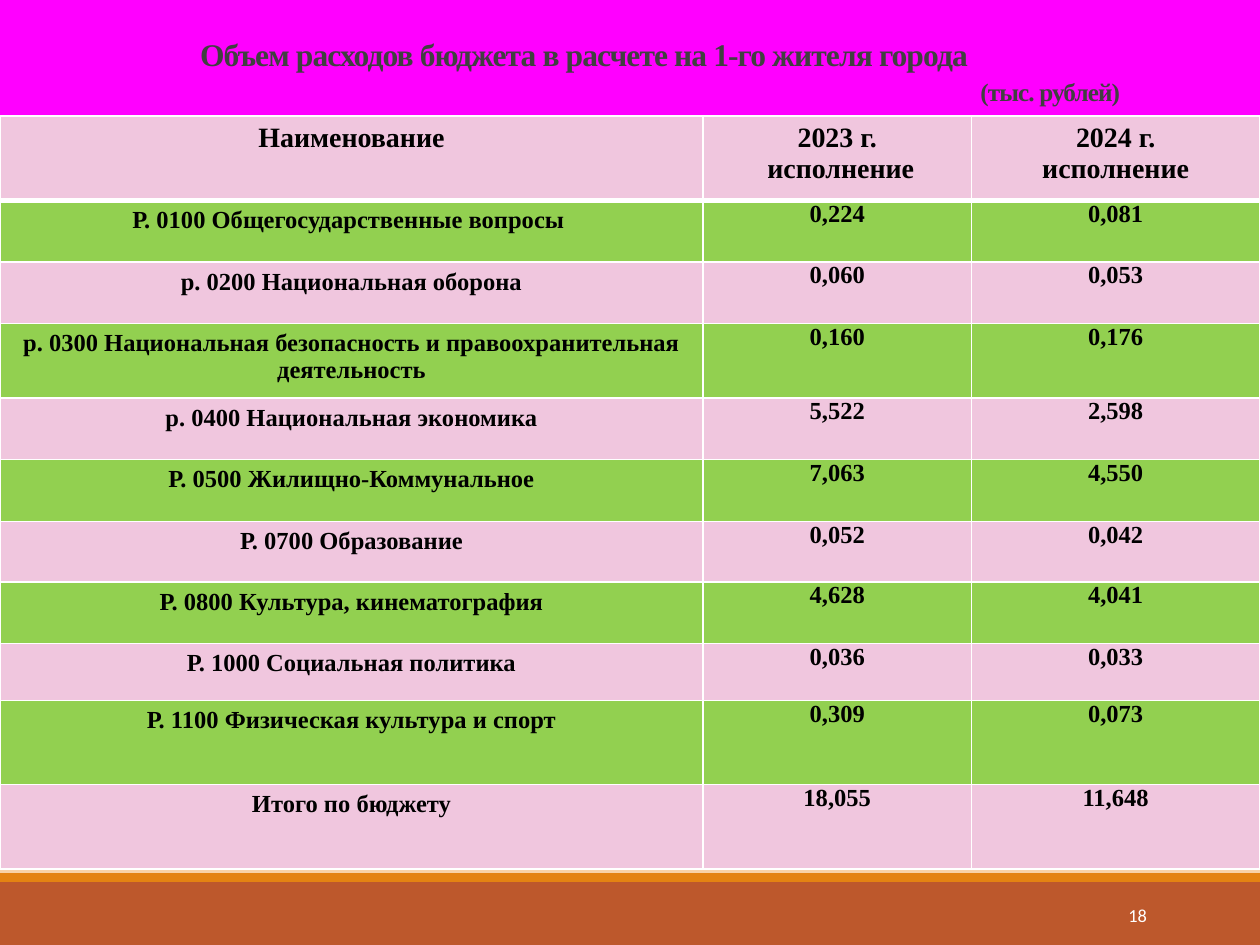
from lxml import etree
from pptx import Presentation
from pptx.dml.color import RGBColor
from pptx.enum.shapes import MSO_SHAPE
from pptx.enum.text import MSO_ANCHOR, PP_ALIGN
from pptx.oxml.ns import qn
from pptx.util import Inches, Pt

CENTER, RIGHT = PP_ALIGN.CENTER, PP_ALIGN.RIGHT
BOTTOM, MIDDLE, TOP = MSO_ANCHOR.BOTTOM, MSO_ANCHOR.MIDDLE, MSO_ANCHOR.TOP
RECTANGLE = MSO_SHAPE.RECTANGLE
SERIF, SANS = "Times New Roman", "Calibri"
PINK, GREEN, WHITE, GREY = "F0C6DE", "92D050", "FFFFFF", "404040"
GRID_COLUMNS, GRID_ROWS = 100, 75
CELL = Inches(0.1)

COLUMN_SPANS = [55.8, 21.3, 22.9]
ROW_SPANS = [6.7, 4.9, 4.9, 5.9, 4.9, 4.9, 4.8, 4.9, 4.5, 6.7, 6.7]
EXPENSES = [
    ("Наименование", "2023 г.\n исполнение", "2024 г.\nисполнение"),
    ("Р. 0100 Общегосударственные вопросы ", "0,224", "0,081"),
    ("р. 0200 Национальная оборона", "0,060", "0,053"),
    ("р. 0300 Национальная безопасность и правоохранительная деятельность", "0,160", "0,176"),
    ("р. 0400 Национальная экономика", "5,522", "2,598"),
    ("Р. 0500 Жилищно-Коммунальное", "7,063", "4,550"),
    ("Р. 0700 Образование", "0,052", "0,042"),
    ("Р. 0800 Культура, кинематография", "4,628", "4,041"),
    ("Р. 1000 Социальная политика", "0,036", "0,033"),
    ("Р. 1100 Физическая культура и спорт", "0,309", "0,073"),
    ("Итого по бюджету", "18,055", "11,648"),
]


def color(value):
    return RGBColor.from_string(value)


def span(count):
    return int(count * CELL)


def place(box):
    return [span(count) for count in box]


def write(paragraph, text, size, font=SERIF, fill="000000", bold=True,
          align=CENTER, line=None, before=None, tracking=None):
    paragraph.alignment = align
    if line:
        paragraph.line_spacing = line
    if before:
        paragraph.space_before = Pt(before)
    run = paragraph.add_run()
    run.text = text
    run.font.size, run.font.name, run.font.bold = Pt(size), font, bold
    run.font.color.rgb = color(fill)
    if tracking:
        run.font._element.set("spc", str(int(tracking * 100)))


def text_frame(slide, box, anchor):
    frame = slide.shapes.add_textbox(*place(box)).text_frame
    frame.word_wrap = True
    frame.vertical_anchor = anchor
    return frame


def border(cell, side, width):
    edge = etree.SubElement(cell._tc.get_or_add_tcPr(), qn(f"a:{side}"), w=str(Pt(width)))
    fill = etree.SubElement(edge, qn("a:solidFill"))
    etree.SubElement(fill, qn("a:srgbClr"), val=WHITE)


def add_background(slide):
    fill = slide.background.fill
    fill.gradient()
    gradient = slide.background._cSld.find(".//" + qn("a:gradFill"))
    stops = gradient.find(qn("a:gsLst"))
    for stop in list(stops):
        stops.remove(stop)
    for position, tone in ((55, "FF00FF"), (74, "F6C791"), (83, "F6C791"), (100, "F9DAB6")):
        stop = etree.SubElement(stops, qn("a:gs"), pos=str(position * 1000))
        etree.SubElement(stop, qn("a:srgbClr"), val=tone)
    gradient.find(qn("a:lin")).set("ang", "5400000")


def add_heading(slide, box):
    frame = text_frame(slide, box, BOTTOM)
    frame.margin_left, frame.margin_right = Inches(0.21), Inches(0.28)
    frame.margin_bottom = Inches(0.07)
    shared = dict(fill=GREY, line=0.85, tracking=-0.5)
    write(frame.paragraphs[0], "Объем расходов бюджета в расчете на 1-го жителя города", 18, **shared)
    write(frame.add_paragraph(), "(тыс. рублей)", 14.4, align=RIGHT, before=5, **shared)


def fill_cell(cell, text, is_header, is_value, fill):
    if is_value and not is_header:
        cell.margin_left = cell.margin_right = cell.margin_top = cell.margin_bottom = 0
    cell.vertical_anchor = TOP
    frame = cell.text_frame
    for index, line in enumerate(text.split("\n")):
        paragraph = frame.add_paragraph() if index else frame.paragraphs[0]
        write(paragraph, line, 16 if is_header else 14)
    for side in ("lnL", "lnR", "lnT", "lnB"):
        border(cell, side, 3 if is_header and side == "lnB" else 1)
    cell.fill.solid()
    cell.fill.fore_color.rgb = color(fill)


def add_expenses(slide, box):
    table = slide.shapes.add_table(len(EXPENSES), len(COLUMN_SPANS), *place(box)).table
    for column, count in zip(table.columns, COLUMN_SPANS):
        column.width = span(count)
    for row, count in zip(table.rows, ROW_SPANS):
        row.height = span(count)
    for r, record in enumerate(EXPENSES):
        for c, text in enumerate(record):
            fill_cell(table.cell(r, c), text, r == 0, c > 0, GREEN if r % 2 else PINK)


def add_band(slide, box, fill):
    band = slide.shapes.add_shape(RECTANGLE, *place(box))
    band.shadow.inherit = False
    band.fill.solid()
    band.fill.fore_color.rgb = color(fill)
    band.line.fill.background()


def add_footer(slide, box):
    left, top, width, height = box
    stripe = 0.7
    add_band(slide, (left, top + stripe, width, height - stripe), "BD582C")
    add_band(slide, (left, top, width, stripe), "E48312")
    number = text_frame(slide, (left + 81.2, top + 1.3, 10.8, 4), MIDDLE)
    write(number.paragraphs[0], "18", 10.5, font=SANS, fill=WHITE, bold=False, align=RIGHT)


def main():
    deck = Presentation()
    deck.slide_width, deck.slide_height = span(GRID_COLUMNS), span(GRID_ROWS)
    slide = deck.slides.add_slide(deck.slide_layouts[6])
    add_background(slide)
    add_heading(slide, (1.7, 1.3, 90, 7.9))
    add_expenses(slide, (0, 9.2, GRID_COLUMNS, sum(ROW_SPANS)))
    add_footer(slide, (0, 69.3, GRID_COLUMNS, 5.7))
    deck.save("out.pptx")


if __name__ == "__main__":
    main()
